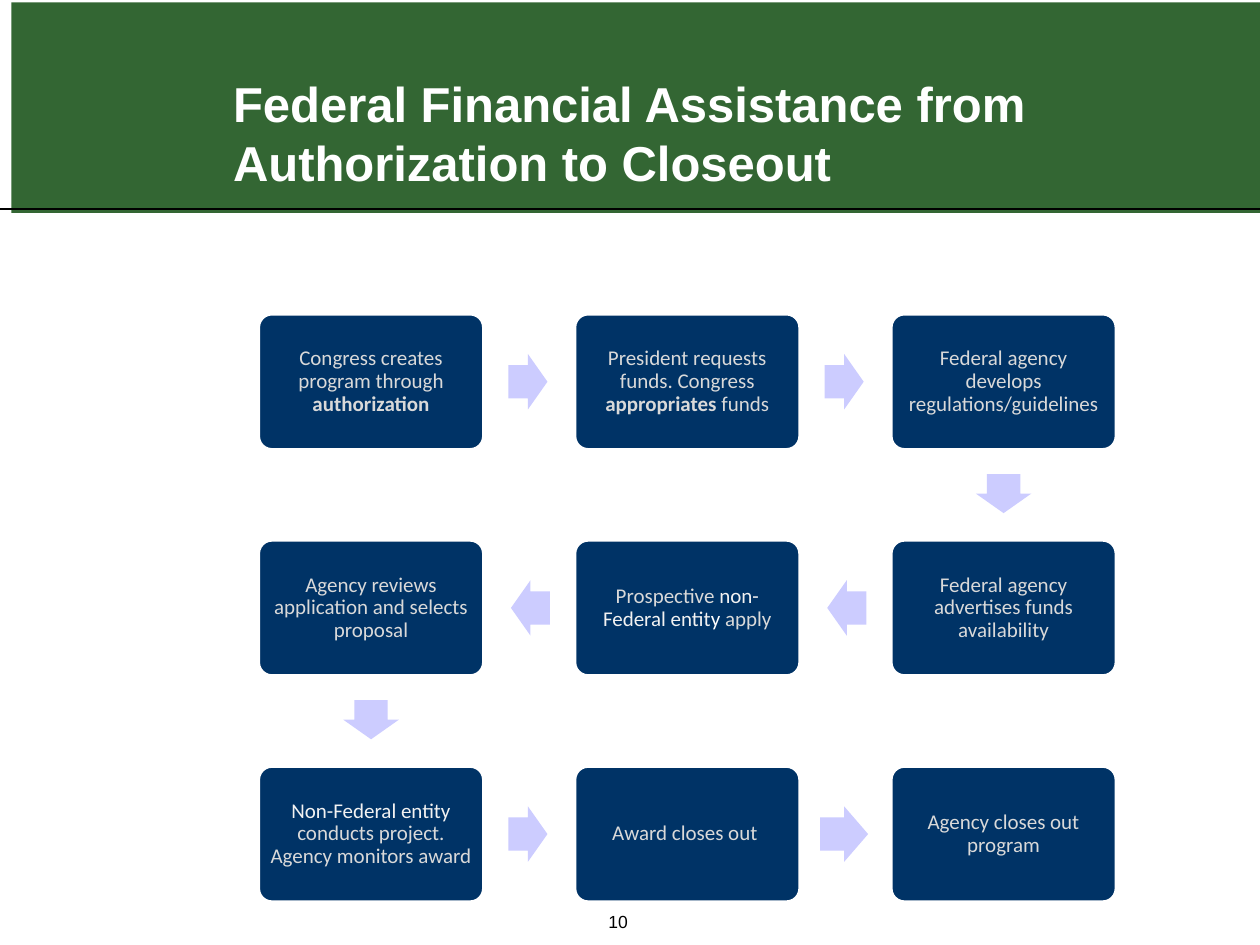
from dataclasses import dataclass
from itertools import pairwise
from typing import NamedTuple

from lxml.etree import SubElement
from pptx import Presentation
from pptx.dml.color import RGBColor
from pptx.enum.shapes import MSO_CONNECTOR, MSO_SHAPE
from pptx.enum.text import MSO_ANCHOR as Anchor, PP_ALIGN as Align
from pptx.oxml.ns import qn
from pptx.util import Inches, Pt


@dataclass(frozen=True)
class Theme:
    banner: RGBColor = RGBColor(0x33, 0x66, 0x33)
    box: RGBColor = RGBColor(0x00, 0x33, 0x66)
    arrow: RGBColor = RGBColor(0xCC, 0xCC, 0xFF)
    white: RGBColor = RGBColor(0xFF, 0xFF, 0xFF)
    black: RGBColor = RGBColor(0x00, 0x00, 0x00)
    body: RGBColor = RGBColor(0xD9, 0xD9, 0xD9)
    bright: RGBColor = RGBColor(0xF2, 0xF2, 0xF2)
    heading_font: str = "Arial"
    body_font: str = "Calibri"
    title_size: int = 28
    step_size: int = 12
    number_size: int = 10


@dataclass(frozen=True)
class Grid:
    """Step grid in inches: first box corner, pitch and box size."""
    left: float = 2.05
    top: float = 2.49
    col_pitch: float = 2.51
    row_pitch: float = 1.795
    box_width: float = 1.79
    box_height: float = 1.08

    def center(self, col: int, row: int) -> tuple[float, float]:
        return (self.left + col * self.col_pitch + self.box_width / 2,
                self.top + row * self.row_pitch + self.box_height / 2)


class Words(NamedTuple):
    text: str
    color: RGBColor | None = None
    bold: bool = False


class Step(NamedTuple):
    col: int
    row: int
    words: list[Words]
    arrow_length: float = 0.31  # arrow that leads into this step


THEME = Theme()
GRID = Grid()
WIDTH, HEIGHT = 10, 7.5
ARROW_BREADTH = 0.44
ARROW_LAG = 0.01  # arrows sit slightly before the middle of the gap

STEPS = [
    Step(0, 0, [Words("Congress creates program through "),
                Words("authorization", bold=True)]),
    Step(1, 0, [Words("President requests funds. Congress "),
                Words("appropriates", bold=True), Words(" funds")]),
    Step(2, 0, [Words("Federal agency develops regulations/guidelines")]),
    Step(2, 1, [Words("Federal agency advertises funds availability")]),
    Step(1, 1, [Words("Prospective "), Words("non-Federal entit", THEME.bright),
                Words("y", THEME.white), Words(" apply")]),
    Step(0, 1, [Words("Agency reviews application and selects proposal")]),
    Step(0, 2, [Words("Non-Federal entity ", THEME.bright),
                Words("conducts project. Agency monitors award")]),
    Step(1, 2, [Words("Award closes out ")]),
    Step(2, 2, [Words("Agency closes out program")], arrow_length=0.38),
]


def add_filled(slide, kind, left: float, top: float, width: float, height: float,
               color: RGBColor):
    shape = slide.shapes.add_shape(kind, Inches(left), Inches(top),
                                   Inches(width), Inches(height))
    shape.shadow.inherit = False
    shape.fill.solid()
    shape.fill.fore_color.rgb = color
    shape.line.fill.background()
    return shape


def set_font(font, name: str, size: int, color: RGBColor, bold: bool = False) -> None:
    font.name, font.size, font.bold = name, Pt(size), bold
    font.color.rgb = color


def add_banner(slide) -> None:
    add_filled(slide, MSO_SHAPE.RECTANGLE, 0.09, 0.02, WIDTH, 1.67, THEME.banner)
    rule = slide.shapes.add_connector(MSO_CONNECTOR.STRAIGHT, 0, Inches(1.66),
                                      Inches(WIDTH), Inches(1.66))
    rule.line.color.rgb = THEME.black
    rule.line.width = Pt(0.75)
    SubElement(rule._element.spPr, qn("a:effectLst"))


def format_title(slide, text: str) -> None:
    """Fill the title placeholder and bring it in front of the banner."""
    title = slide.shapes.title
    slide.shapes._spTree.append(title._element)
    title.left, title.top = Inches(1.75), Inches(0.36)
    title.width, title.height = Inches(6.53), Inches(1.21)
    frame = title.text_frame
    frame.text = text
    frame.vertical_anchor = Anchor.BOTTOM
    heading = frame.paragraphs[0]
    heading.alignment = Align.LEFT
    set_font(heading.font, THEME.heading_font, THEME.title_size, THEME.white, True)


def add_step(slide, step: Step) -> None:
    x, y = GRID.center(step.col, step.row)
    box = add_filled(slide, MSO_SHAPE.ROUNDED_RECTANGLE,
                     x - GRID.box_width / 2, y - GRID.box_height / 2,
                     GRID.box_width, GRID.box_height, THEME.box)
    box.adjustments[0] = 0.1
    box.line.color.rgb = THEME.white
    box.line.width = Pt(2)
    frame = box.text_frame
    frame.word_wrap = True
    frame.vertical_anchor = Anchor.MIDDLE
    frame.margin_left = frame.margin_right = Inches(0.05)
    frame.margin_top = frame.margin_bottom = Inches(0.05)
    label = frame.paragraphs[0]
    label.alignment = Align.CENTER
    label.line_spacing = 0.9
    for words in step.words:
        run = label.add_run()
        run.text = words.text
        set_font(run.font, THEME.body_font, THEME.step_size,
                 words.color or THEME.body, words.bold)


def add_arrow(slide, start: Step, end: Step) -> None:
    (x1, y1), (x2, y2) = GRID.center(start.col, start.row), GRID.center(end.col, end.row)
    across, down = end.col - start.col, end.row - start.row
    x = (x1 + x2) / 2 - ARROW_LAG * across
    y = (y1 + y2) / 2 - ARROW_LAG * down
    arrow = add_filled(slide, MSO_SHAPE.RIGHT_ARROW,
                       x - end.arrow_length / 2, y - ARROW_BREADTH / 2,
                       end.arrow_length, ARROW_BREADTH, THEME.arrow)
    arrow.adjustments[0], arrow.adjustments[1] = 0.6, 0.5
    arrow.rotation = 90 if down else 0 if across > 0 else 180


def add_page_number(slide, number: int) -> None:
    frame = slide.shapes.add_textbox(Inches(3.98), Inches(7.28),
                                     Inches(1.85), Inches(0.17)).text_frame
    frame.word_wrap = True
    frame.vertical_anchor = Anchor.BOTTOM
    frame.text = str(number)
    line = frame.paragraphs[0]
    line.alignment = Align.CENTER
    set_font(line.font, THEME.heading_font, THEME.number_size, THEME.black)


def main() -> None:
    deck = Presentation()
    deck.slide_width, deck.slide_height = Inches(WIDTH), Inches(HEIGHT)
    slide = deck.slides.add_slide(deck.slide_layouts[5])
    add_banner(slide)
    format_title(slide, "Federal Financial Assistance from Authorization to Closeout")
    for step in STEPS:
        add_step(slide, step)
    for start, end in pairwise(STEPS):
        add_arrow(slide, start, end)
    add_page_number(slide, 10)
    deck.save("out.pptx")


if __name__ == "__main__":
    main()
